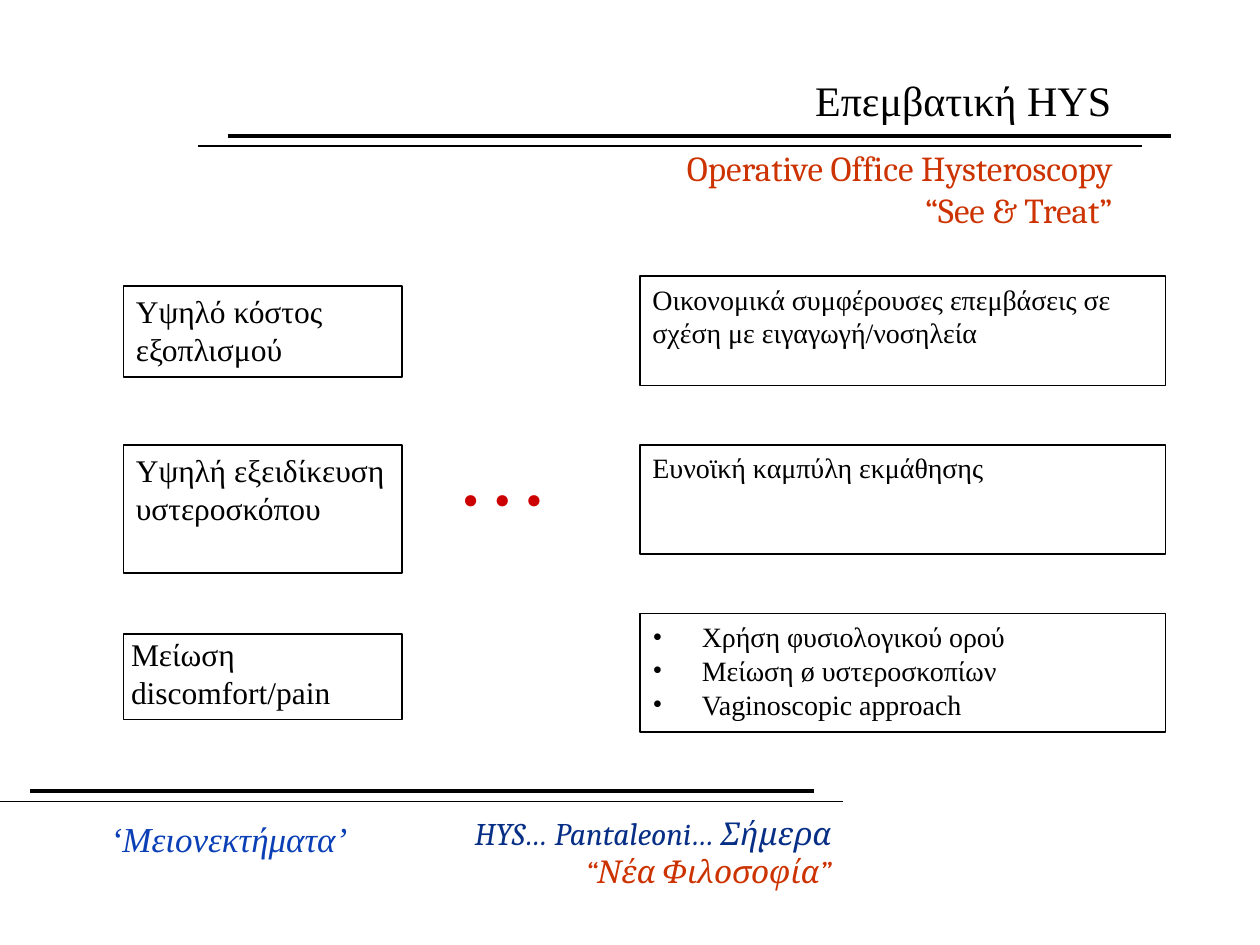
from lxml.etree import SubElement
from pptx import Presentation
from pptx.dml.color import RGBColor
from pptx.enum.shapes import MSO_CONNECTOR, MSO_SHAPE
from pptx.enum.text import MSO_ANCHOR, MSO_AUTO_SIZE, PP_ALIGN
from pptx.oxml.ns import qn
from pptx.util import Inches, Pt

BLACK = RGBColor(0x00, 0x00, 0x00)
RED = RGBColor(0xCC, 0x00, 0x00)
ORANGE = RGBColor(0xCC, 0x33, 0x00)
NAVY = RGBColor(0x08, 0x2F, 0x86)
BLUE = RGBColor(0x0A, 0x3F, 0xB6)
SERIF = "Times New Roman"
ACCENT = "Cambria"
INSETS = (0.1, 0.05, 0.1, 0.05)


class SlideBuilder:
    """Adds consistently styled elements to one slide."""

    def __init__(self, slide):
        self.slide = slide

    def set_text(self, frame, text, size, colors, font=SERIF, italic=False,
                 align=PP_ALIGN.LEFT, anchor=MSO_ANCHOR.TOP, wrap=True, insets=INSETS):
        frame.text = text
        frame.word_wrap = wrap
        frame.auto_size = MSO_AUTO_SIZE.NONE
        frame.vertical_anchor = anchor
        frame.margin_left, frame.margin_top, frame.margin_right, frame.margin_bottom = map(Inches, insets)
        for paragraph in frame.paragraphs:
            paragraph.alignment = align
            paragraph.space_before = Pt(0)
            for index, run in enumerate(paragraph.runs):
                run.font.name = font
                run.font.size = Pt(size)
                run.font.italic = italic
                run.font.color.rgb = colors[min(index, len(colors) - 1)]

    def place(self, holder, left, top, width, height):
        holder.left, holder.top = Inches(left), Inches(top)
        holder.width, holder.height = Inches(width), Inches(height)

    def title(self, text, bounds):
        heading = self.slide.shapes.title
        self.place(heading, *bounds)
        self.set_text(heading.text_frame, text, 24, [BLACK],
                      align=PP_ALIGN.RIGHT, anchor=MSO_ANCHOR.MIDDLE)

    def bullets(self, items, bounds):
        body = self.slide.placeholders[1]
        self.place(body, *bounds)
        body.line.color.rgb = BLACK
        body.line.width = Pt(1)
        self.set_text(body.text_frame, "\n".join(items), 16, [BLACK])
        for paragraph in body.text_frame.paragraphs:
            properties = paragraph._p.get_or_add_pPr()
            properties.set("marL", str(Inches(0.39)))
            properties.set("indent", str(-Inches(0.39)))
            SubElement(properties, qn("a:buFont"), typeface=SERIF)
            SubElement(properties, qn("a:buChar"), char="•")

    def box(self, text, bounds, size, insets=INSETS):
        frame = self.slide.shapes.add_shape(MSO_SHAPE.RECTANGLE, *map(Inches, bounds))
        frame.shadow.inherit = False
        frame.fill.background()
        frame.line.color.rgb = BLACK
        frame.line.width = Pt(1)
        self.set_text(frame.text_frame, text, size, [BLACK], insets=insets)

    def label(self, text, bounds, size, colors, **style):
        caption = self.slide.shapes.add_textbox(*map(Inches, bounds))
        self.set_text(caption.text_frame, text, size, colors, **style)

    def rule(self, start, end, y, weight):
        line = self.slide.shapes.add_connector(
            MSO_CONNECTOR.STRAIGHT, Inches(start), Inches(y), Inches(end), Inches(y))
        line.line.color.rgb = BLACK
        line.line.width = Pt(weight)
        SubElement(line._element.spPr, qn("a:effectLst"))


def main():
    presentation = Presentation()
    presentation.slide_width, presentation.slide_height = Inches(10), Inches(7.5)
    builder = SlideBuilder(presentation.slides.add_slide(presentation.slide_layouts[1]))

    builder.title("Επεμβατική HYS", (0.75, 0.58, 8.17, 0.42))
    builder.label("Operative Office Hysteroscopy\v“See & Treat”", (0.76, 1.25, 8.17, 0.5), 20,
                  [ORANGE], font=ACCENT, align=PP_ALIGN.RIGHT, anchor=MSO_ANCHOR.MIDDLE)

    drawbacks = [
        ("Υψηλό κόστος εξοπλισμού", 2.27, 0.72, INSETS),
        ("Υψηλή εξειδίκευση υστεροσκόπου", 3.53, 1.02, INSETS),
        ("Μείωση discomfort/pain", 5.03, 0.68, (0.06, 0.01, 0.1, 0.05)),
    ]
    for text, top, height, insets in drawbacks:
        builder.box(text, (0.98, top, 2.21, height), 18, insets)

    answers = [
        "Οικονομικά συμφέρουσες επεμβάσεις σε σχέση με ειγαγωγή/νοσηλεία",
        "Ευνοϊκή καμπύλη εκμάθησης",
    ]
    for row, text in enumerate(answers):
        builder.box(text, (5.08, 2.19 + 1.34 * row, 4.17, 0.87), 16)
    builder.bullets(["Χρήση φυσιολογικού ορού", "Μείωση ø υστεροσκοπίων", "Vaginoscopic approach"],
                    (5.08, 4.87, 4.17, 0.94))

    builder.label("…", (3.52, 3.21, 1.26, 1), 54, [RED])
    builder.label("‘Μειονεκτήματα’", (0.78, 6.44, 2.09, 0.44), 20, [BLUE], italic=True, wrap=False)
    builder.label("HYS… Pantaleoni… Σήμερα\v“Νέα Φιλοσοφία”", (2.34, 6.41, 4.36, 0.7), 18,
                  [NAVY, ORANGE], font=ACCENT, italic=True, align=PP_ALIGN.RIGHT)

    for start, end, y, weight in [(0, 6.69, 6.36, 0.75), (0.24, 6.46, 6.28, 2.25),
                                  (1.57, 9.06, 1.16, 0.75), (1.81, 9.29, 1.08, 2.25)]:
        builder.rule(start, end, y, weight)

    presentation.save("out.pptx")


if __name__ == "__main__":
    main()
